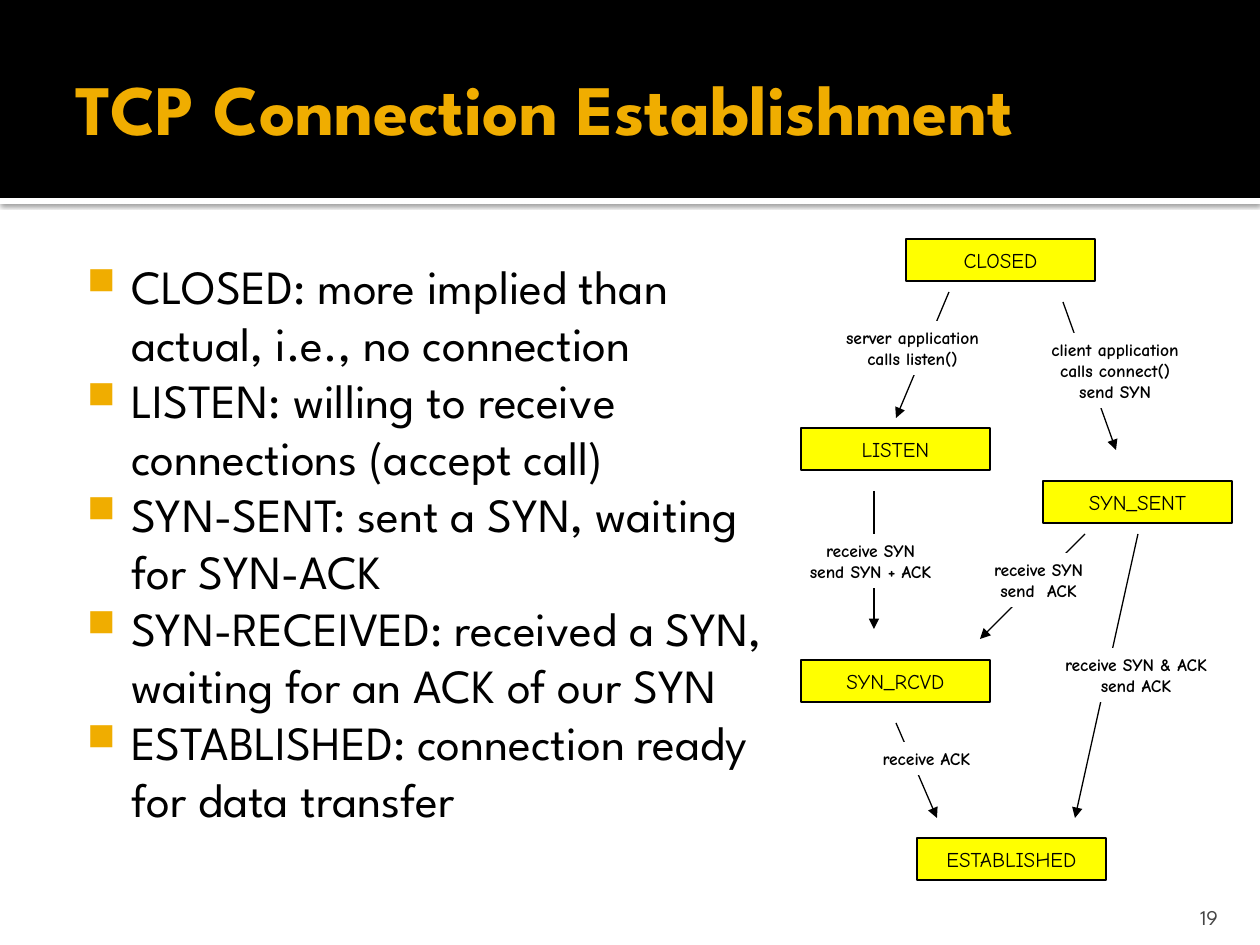
from dataclasses import dataclass

from lxml.etree import SubElement
from pptx import Presentation
from pptx.dml.color import RGBColor
from pptx.enum.shapes import MSO_CONNECTOR, MSO_SHAPE
from pptx.enum.text import MSO_ANCHOR, MSO_AUTO_SIZE, PP_ALIGN
from pptx.oxml.ns import qn
from pptx.util import Pt

SCALE = 914400 / 126


@dataclass(frozen=True)
class Theme:
    """Colours, fonts and type sizes of the slide."""
    gold: str = "F0AD00"
    black: str = "000000"
    white: str = "FFFFFF"
    yellow: str = "FFFF00"
    grey: str = "454545"
    main: str = "League Spartan"
    hand: str = "Comic Neue"
    head: float = 40.5
    body: float = 27.2
    state: float = 12
    note: float = 10
    lead: float = 32.6
    rule: float = 0.75


def px(size):
    """Turn pixels into EMU."""
    return round(size * SCALE)


def tag(parent, name, **attrs):
    """Add an XML child with the given attributes."""
    return SubElement(parent, qn(name), {key: str(val) for key, val in attrs.items()})


def write(frame, text, *, font, size, color, bold=False, align=PP_ALIGN.LEFT,
          anchor=MSO_ANCHOR.TOP, wrap=True, pad=None, lead=None):
    """Fill a text frame, one paragraph for each line."""
    frame.word_wrap = wrap
    frame.vertical_anchor = anchor
    if pad:
        (frame.margin_left, frame.margin_top,
         frame.margin_right, frame.margin_bottom) = map(px, pad)
    frame.text = text
    for par in frame.paragraphs:
        par.alignment = align
        if lead:
            par.line_spacing = Pt(lead)
        face = par.runs[0].font
        face.name, face.size, face.bold = font, Pt(size), bold
        face.color.rgb = RGBColor.from_string(color)


class Deck:
    """Holds the theme and the current slide."""

    def __init__(self, theme):
        """Start a deck with one blank slide."""
        self.theme = theme
        self.file = Presentation()
        self.file.slide_width, self.file.slide_height = px(1260), px(945)
        self.slide = self.file.slides.add_slide(self.file.slide_layouts[6])

    def block(self, left, top, width, height, fill, edge=None):
        """Draw a plain rectangle."""
        shape = self.slide.shapes.add_shape(
            MSO_SHAPE.RECTANGLE, *map(px, (left, top, width, height)))
        shape.shadow.inherit = False
        shape.fill.solid()
        shape.fill.fore_color.rgb = RGBColor.from_string(fill)
        if edge:
            shape.line.color.rgb = RGBColor.from_string(edge)
            shape.line.width = Pt(self.theme.rule)
        else:
            shape.line.fill.background()
        return shape

    def band(self):
        """Draw the header band and its shaded white strip."""
        strip = self.block(0, 198, 1260, 6, self.theme.white)
        glow = tag(strip.element.spPr.find(qn("a:effectLst")), "a:outerShdw",
                   blurRad=Pt(2.5), dist=Pt(0.8), dir=5400000, algn="t", rotWithShape=0)
        tag(tag(glow, "a:srgbClr", val=self.theme.black), "a:alpha", val=60000)
        self.block(0, 0, 1260, 198, self.theme.black)

    def text(self, left, top, width, height, words, **form):
        """Place a text box."""
        box = self.slide.shapes.add_textbox(*map(px, (left, top, width, height)))
        write(box.text_frame, words, font=self.theme.main, **form)
        return box

    def list(self, left, top, width, height, items):
        """Place a list with square bullets."""
        box = self.text(left, top, width, height, "\n".join(items),
                        size=self.theme.body, color=self.theme.black,
                        pad=(8, 13, 13, 6), lead=self.theme.lead)
        for par in box.text_frame.paragraphs:
            props = par._p.get_or_add_pPr()
            props.set("marL", str(px(60)))
            props.set("indent", str(px(-44)))
            tag(tag(props, "a:buClr"), "a:srgbClr", val=self.theme.gold)
            tag(props, "a:buSzPct", val=80000)
            tag(props, "a:buChar", char="■")

    def state(self, left, top, name):
        """Draw a state box."""
        box = self.block(left, top, 189, 42, self.theme.yellow, self.theme.black)
        write(box.text_frame, name, font=self.theme.hand, size=self.theme.state,
              color=self.theme.black, align=PP_ALIGN.CENTER,
              anchor=MSO_ANCHOR.MIDDLE, wrap=False)

    def arrow(self, *ends):
        """Draw a line with an arrowhead at its end."""
        line = self.slide.shapes.add_connector(MSO_CONNECTOR.STRAIGHT, *map(px, ends))
        line.line.color.rgb = RGBColor.from_string(self.theme.black)
        line.line.width = Pt(self.theme.rule)
        tag(line.line._get_or_add_ln(), "a:tailEnd", type="triangle")
        tag(line._element.spPr, "a:effectLst")

    def label(self, left, top, width, words):
        """Place a white label as tall as its lines."""
        rows = words.count("\n") + 1
        box = self.block(left, top, width, 12 + 21 * rows, self.theme.white)
        write(box.text_frame, words, font=self.theme.hand, size=self.theme.note,
              color=self.theme.black, bold=True, align=PP_ALIGN.CENTER, wrap=False)
        box.text_frame.auto_size = MSO_AUTO_SIZE.SHAPE_TO_FIT_TEXT


def main():
    """Build the slide and save it."""
    theme = Theme()
    deck = Deck(theme)
    deck.band()
    deck.text(63, 21, 1134, 173, "TCP Connection Establishment", size=theme.head,
              color=theme.gold, bold=True, anchor=MSO_ANCHOR.MIDDLE, pad=(13, 6, 6, 6))
    deck.list(63, 244, 738, 638, (
        "CLOSED: more implied than actual, i.e., no connection",
        "LISTEN: willing to receive connections (accept call)",
        "SYN-SENT: sent a SYN, waiting for SYN-ACK",
        "SYN-RECEIVED: received a SYN, waiting for an ACK of our SYN",
        "ESTABLISHED: connection ready for data transfer",
    ))
    deck.text(1130, 892, 101, 38, "19", size=theme.state, color=theme.grey,
              align=PP_ALIGN.RIGHT, anchor=MSO_ANCHOR.BOTTOM, pad=(13, 6, 13, 0))
    for state in (
        (917, 838, "ESTABLISHED"),
        (801, 660, "SYN_RCVD"),
        (1043, 481, "SYN_SENT"),
        (906, 239, "CLOSED"),
        (801, 428, "LISTEN"),
    ):
        deck.state(*state)
    for ends in (
        (949, 292, 896, 418),
        (874, 491, 874, 629),
        (896, 723, 937, 818),
        (1138, 534, 1075, 818),
        (1063, 302, 1116, 450),
        (1085, 534, 980, 639),
    ):
        deck.arrow(*ends)
    for label in (
        (1031, 333, 168, "client application\ncalls connect()\nsend SYN"),
        (786, 534, 169, "receive SYN\nsend SYN + ACK"),
        (825, 321, 175, "server application\ncalls listen()"),
        (1040, 648, 192, "receive SYN & ACK\nsend ACK"),
        (863, 742, 127, "receive ACK"),
        (973, 553, 131, "receive SYN\nsend  ACK"),
    ):
        deck.label(*label)
    deck.file.save("out.pptx")


if __name__ == "__main__":
    main()
